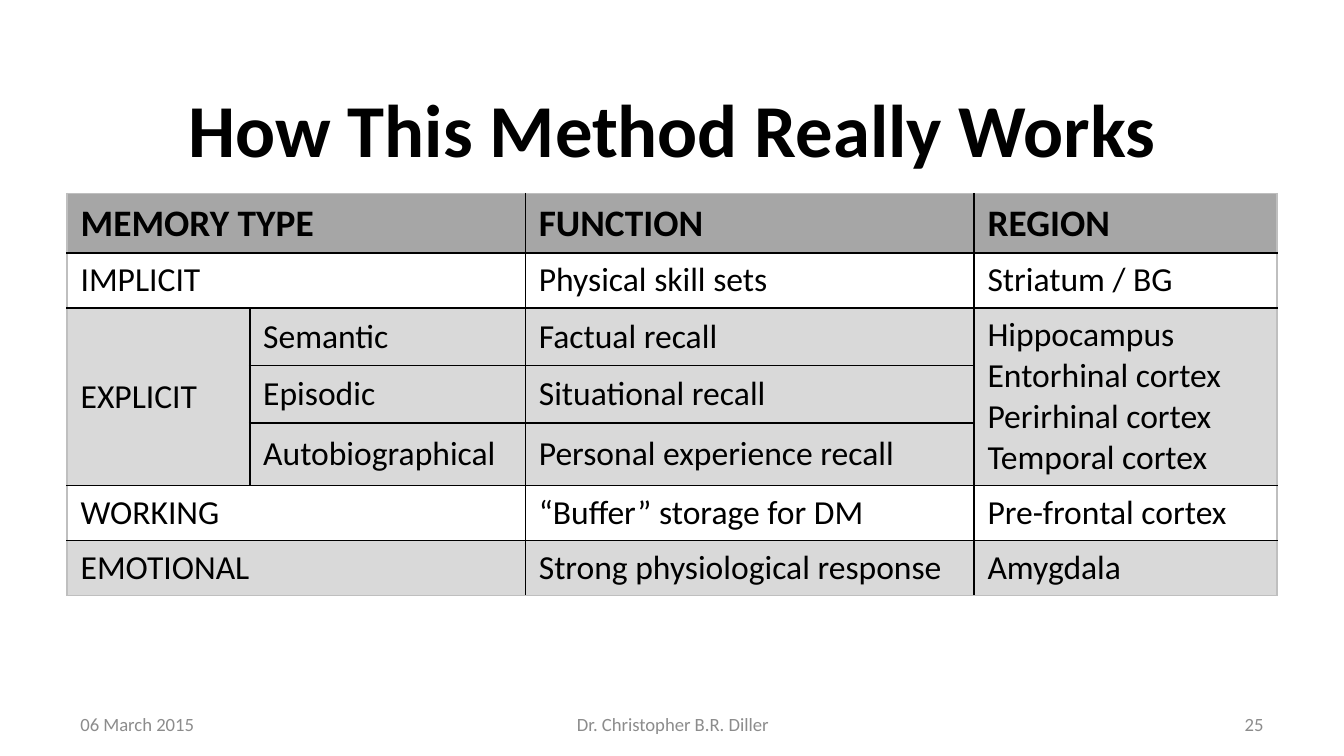
from dataclasses import dataclass

from lxml import etree
from pptx import Presentation
from pptx import util as u
from pptx.dml.color import RGBColor
from pptx.enum import text
from pptx.oxml import ns


@dataclass(frozen=True)
class Theme:
    """Colours, font and type sizes of the slide."""
    font: str = "Calibri"
    ink: str = "000000"
    muted: str = "8C8C8C"
    edge: str = "BFBFBF"
    header: str = "A6A6A6"
    band: str = "D9D9D9"
    plain: str = "FFFFFF"
    title_size: int = 40
    header_size: int = 20
    body_size: int = 18
    footer_size: int = 10


THEME = Theme()
MARGIN, CONTENT_WIDTH = 1.27, 22.86
COLUMN_WIDTHS = (3.45, 5.21, 8.48, 5.72)
ROW_HEIGHTS = (1.04, 1.04, 1.09, 1.09, 1.09, 1.04, 1.04)
MEMORY_ROWS = (
    ("MEMORY TYPE", "", "FUNCTION", "REGION"),
    ("IMPLICIT", "", "Physical skill sets", "Striatum / BG"),
    ("EXPLICIT", "Semantic", "Factual recall",
     "Hippocampus\nEntorhinal cortex\nPerirhinal cortex\nTemporal cortex"),
    ("", "Episodic", "Situational recall", ""),
    ("", "Autobiographical", "Personal experience recall", ""),
    ("WORKING", "", "“Buffer” storage for DM", "Pre-frontal cortex"),
    ("EMOTIONAL", "", "Strong physiological response", "Amygdala"),
)
ROW_FILLS = (THEME.header, THEME.plain, THEME.band, THEME.band, THEME.band,
             THEME.plain, THEME.band)
FULL_WIDTH_TYPES = (0, 1, 5, 6)
EXPLICIT_FIRST, EXPLICIT_LAST = 2, 4
ALIGN = text.PP_ALIGN


def write(frame, wording, size, color=THEME.ink, bold=False, align=ALIGN.LEFT):
    """Write each line of the wording as a paragraph with one styled run."""
    frame.word_wrap = True
    for index, line in enumerate(wording.split("\n")):
        paragraph = frame.add_paragraph() if index else frame.paragraphs[0]
        paragraph.alignment = align
        run = paragraph.add_run()
        run.text = line
        run.font.name = THEME.font
        run.font.size = u.Pt(size)
        run.font.bold = bold
        run.font.color.rgb = RGBColor.from_string(color)


def add_title(slide, wording):
    """Place the slide title in its placeholder."""
    title = slide.shapes.title
    title.left, title.top = u.Cm(MARGIN), u.Cm(1.52)
    title.width, title.height = u.Cm(CONTENT_WIDTH), u.Cm(1.8)
    title.text_frame.vertical_anchor = text.MSO_ANCHOR.MIDDLE
    write(title.text_frame, wording, THEME.title_size, bold=True, align=ALIGN.CENTER)


def set_borders(cell, row, column):
    """Rule a cell in black inside the table and in grey on its outer edge."""
    outer = {"L": column == 0, "R": column == len(COLUMN_WIDTHS) - 1,
             "T": row == 0, "B": row == len(ROW_HEIGHTS) - 1}
    properties = cell._tc.get_or_add_tcPr()
    for side, is_outer in outer.items():
        line = etree.SubElement(properties, ns.qn(f"a:ln{side}"), w=str(u.Pt(1)))
        fill = etree.SubElement(line, ns.qn("a:solidFill"))
        etree.SubElement(fill, ns.qn("a:srgbClr"),
                         val=THEME.edge if is_outer else THEME.ink)


def fill_cell(cell, wording, row, column):
    """Style one table cell and write its wording."""
    set_borders(cell, row, column)
    cell.fill.solid()
    cell.fill.fore_color.rgb = RGBColor.from_string(ROW_FILLS[row])
    cell.vertical_anchor = text.MSO_ANCHOR.MIDDLE
    if wording:
        size = THEME.body_size if row else THEME.header_size
        write(cell.text_frame, wording, size, bold=row == 0)


def add_memory_table(slide):
    """Add the table of memory types, functions and brain regions."""
    table = slide.shapes.add_table(
        len(ROW_HEIGHTS), len(COLUMN_WIDTHS), u.Cm(MARGIN), u.Cm(3.66),
        u.Cm(CONTENT_WIDTH), u.Cm(sum(ROW_HEIGHTS))).table
    table.first_row = table.horz_banding = False
    for column, width in zip(table.columns, COLUMN_WIDTHS):
        column.width = u.Cm(width)
    for row, height in zip(table.rows, ROW_HEIGHTS):
        row.height = u.Cm(height)
    for row in FULL_WIDTH_TYPES:
        table.cell(row, 0).merge(table.cell(row, 1))
    for column in (0, 3):
        table.cell(EXPLICIT_FIRST, column).merge(table.cell(EXPLICIT_LAST, column))
    for row, wordings in enumerate(MEMORY_ROWS):
        for column, wording in enumerate(wordings):
            fill_cell(table.cell(row, column), wording, row, column)


def add_footer(slide, wording, left, width, align):
    """Add one muted footer text."""
    footer = slide.shapes.add_textbox(u.Cm(left), u.Cm(13.44), u.Cm(width), u.Cm(0.51))
    frame = footer.text_frame
    frame.margin_top = frame.margin_bottom = 0
    frame.vertical_anchor = text.MSO_ANCHOR.MIDDLE
    write(frame, wording, THEME.footer_size, THEME.muted, align=align)


def main():
    """Build the memory types slide and save it."""
    deck = Presentation()
    deck.slide_width, deck.slide_height = u.Cm(25.4), u.Cm(14.29)
    slide = deck.slides.add_slide(deck.slide_layouts.get_by_name("Title Only"))
    add_title(slide, "How This Method Really Works")
    add_memory_table(slide)
    add_footer(slide, "06 March 2015", MARGIN, 5.92, ALIGN.LEFT)
    add_footer(slide, "Dr. Christopher B.R. Diller", 8.69, 8.05, ALIGN.CENTER)
    add_footer(slide, "25", 18.21, 5.92, ALIGN.RIGHT)
    deck.save("out.pptx")


if __name__ == "__main__":
    main()
